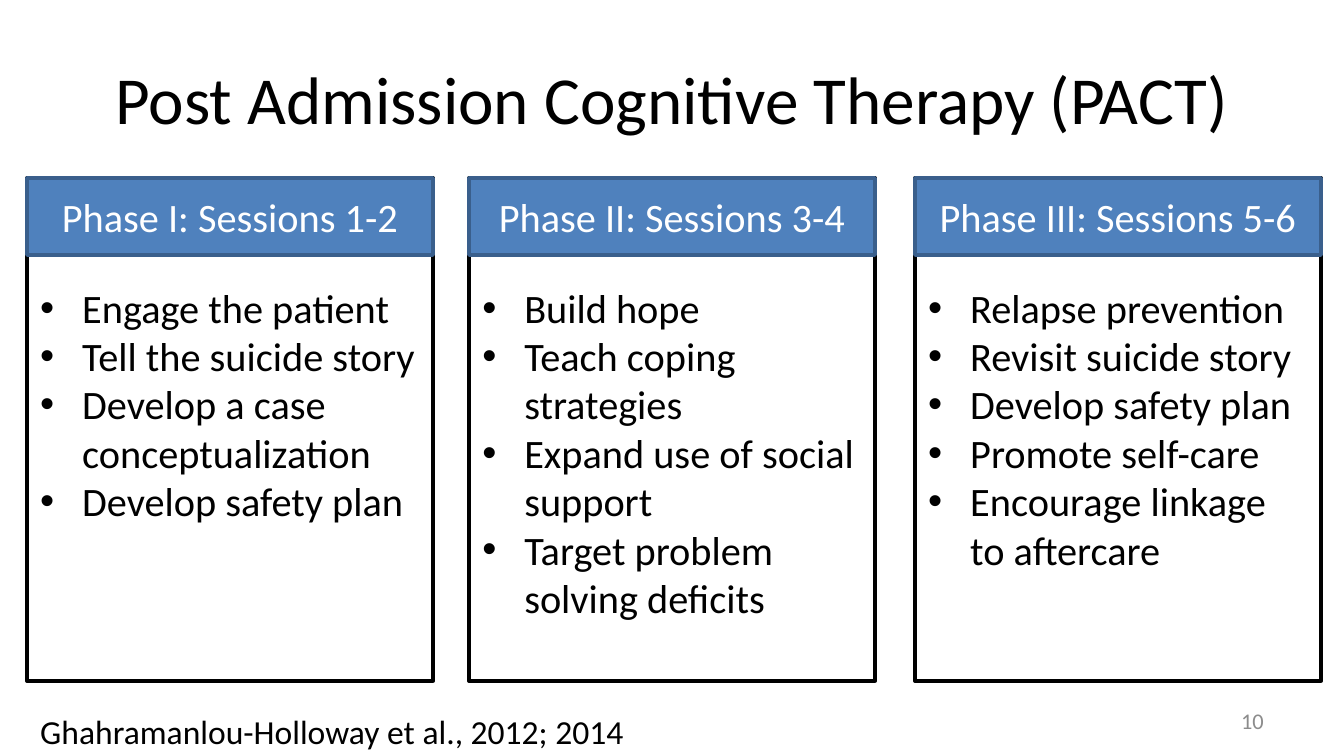
"""Build the slide on the three phases of Post Admission Cognitive Therapy."""
from lxml import etree
from pptx import Presentation
from pptx.dml.color import RGBColor
from pptx.enum.shapes import MSO_SHAPE
from pptx.enum.text import MSO_ANCHOR, PP_ALIGN
from pptx.oxml.ns import qn
from pptx.util import Pt

PX = 914400 / 134.4
RECT = MSO_SHAPE.RECTANGLE
TOP, MIDDLE = MSO_ANCHOR.TOP, MSO_ANCHOR.MIDDLE
LEFT, CENTER, RIGHT = PP_ALIGN.LEFT, PP_ALIGN.CENTER, PP_ALIGN.RIGHT
BLACK = RGBColor(0x00, 0x00, 0x00)
WHITE = RGBColor(0xFF, 0xFF, 0xFF)
BLUE = RGBColor(0x4F, 0x81, 0xBD)
NAVY = RGBColor(0x3A, 0x5F, 0x8C)
GRAY = RGBColor(0x8C, 0x8C, 0x8C)

PHASES = [
    (27, "Phase I: Sessions 1-2", [
        "Engage the patient",
        "Tell the suicide story",
        "Develop a case conceptualization",
        "Develop safety plan",
    ]),
    (469, "Phase II: Sessions 3-4", [
        "Build hope",
        "Teach coping strategies",
        "Expand use of social support",
        "Target problem solving deficits",
    ]),
    (915, "Phase III: Sessions 5-6", [
        "Relapse prevention",
        "Revisit suicide story",
        "Develop safety plan",
        "Promote self-care",
        "Encourage linkage to aftercare",
    ]),
]
CARD_TOP, CARD_W, CARD_H, HEAD_H = 178, 406, 503, 77
TEXT_TOP, INDENT, SIZE = 105, 42, 21.6


def px(n):
    return round(n * PX)


def write(shape, lines, size, color, align=LEFT, anchor=MIDDLE):
    frame = shape.text_frame
    frame.word_wrap = True
    frame.vertical_anchor = anchor
    frame.text = "\n".join(lines)
    for para in frame.paragraphs:
        para.alignment = align
        para.font.name = "Calibri"
        para.font.size = Pt(size)
        para.font.color.rgb = color
    return frame


deck = Presentation()
deck.slide_width, deck.slide_height = px(1344), px(756)
slide = deck.slides.add_slide(deck.slide_layouts[6])
shapes = slide.shapes

title = shapes.add_textbox(px(67), px(35), px(1210), px(126))
write(title, ["Post Admission Cognitive Therapy (PACT)"], 36, BLACK, CENTER)

for left, name, goals in PHASES:
    card = shapes.add_shape(RECT, px(left), px(CARD_TOP), px(CARD_W), px(CARD_H))
    head = shapes.add_shape(RECT, px(left), px(CARD_TOP), px(CARD_W), px(HEAD_H))
    for shape, fill, line in ((card, WHITE, BLACK), (head, BLUE, NAVY)):
        shape.shadow.inherit = False
        shape.fill.solid()
        shape.fill.fore_color.rgb = fill
        shape.line.color.rgb = line
        shape.line.width = Pt(2)

    write(head, [name], SIZE, WHITE, CENTER)
    frame = write(card, goals, SIZE, BLACK, anchor=TOP)
    frame.margin_top = px(TEXT_TOP)
    for para in frame.paragraphs:
        props = para._p.get_or_add_pPr()
        props.set("marL", str(px(INDENT)))
        props.set("indent", str(-px(INDENT)))
        font = etree.Element(qn("a:buFont"), typeface="Arial")
        mark = etree.Element(qn("a:buChar"), char="•")
        props.insert(0, font)
        props.insert(1, mark)

source = shapes.add_textbox(px(27), px(704), px(1196), px(54))
write(source, ["Ghahramanlou-Holloway et al., 2012; 2014"], 18, BLACK, anchor=TOP)

number = shapes.add_textbox(px(964), px(701), px(313), px(40))
write(number, ["10"], 12, GRAY, RIGHT)

deck.save("out.pptx")
